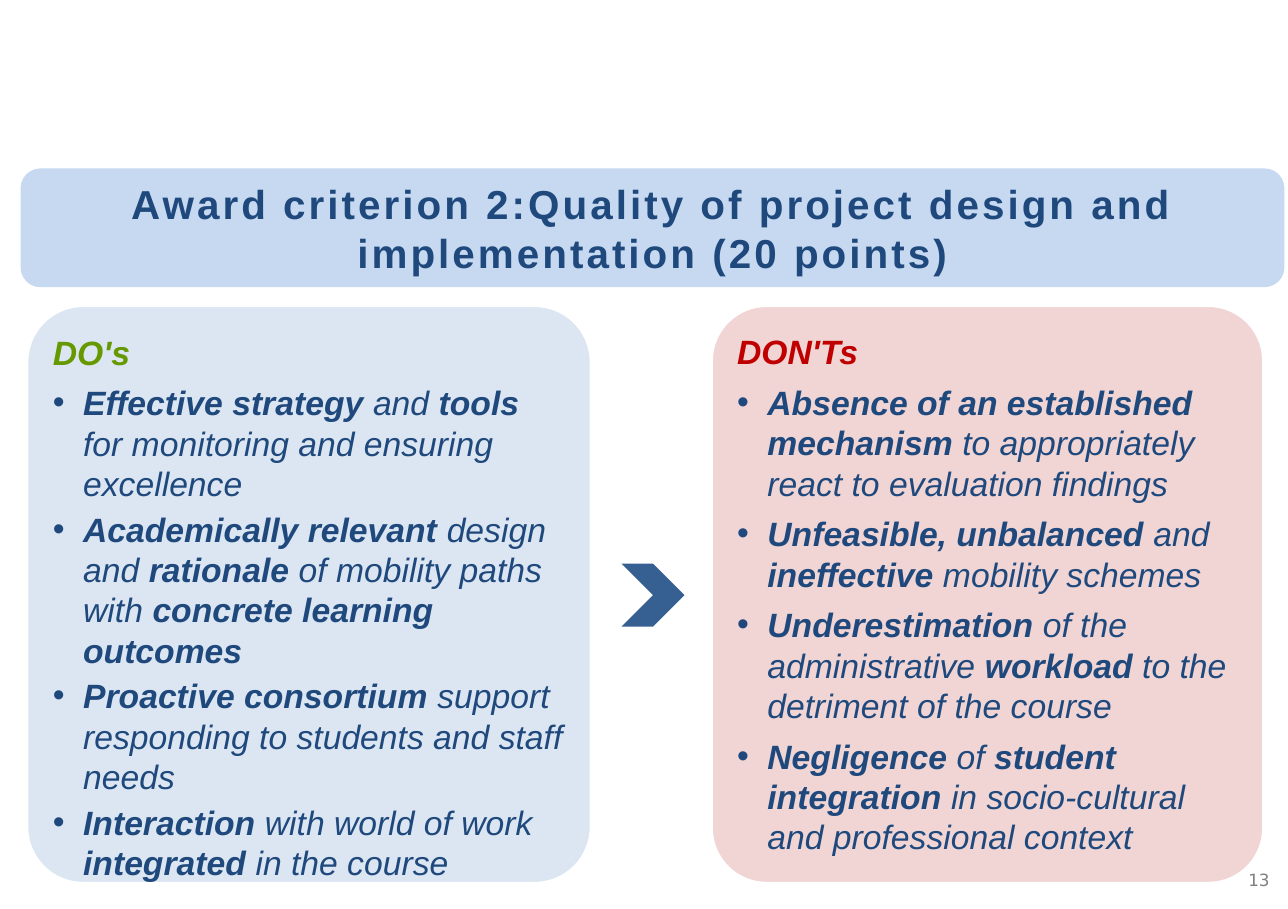
"""Build the slide on award criterion 2: project design and implementation."""
from dataclasses import dataclass

from lxml.etree import SubElement
from pptx import Presentation
from pptx.dml.color import RGBColor
from pptx.enum.shapes import MSO_SHAPE
from pptx.enum.text import MSO_ANCHOR, MSO_AUTO_SIZE, PP_ALIGN
from pptx.oxml.ns import qn
from pptx.util import Inches, Pt


@dataclass
class Theme:
    font: str = "Arial"
    number_font: str = "DejaVu Sans"
    navy: str = "1F497D"
    arrow: str = "376092"
    banner: str = "C6D9F1"
    do_fill: str = "DCE6F2"
    dont_fill: str = "E6B9B8"
    do_heading: str = "669900"
    dont_heading: str = "C00000"
    white: str = "FFFFFF"
    grey: str = "808080"
    title_size: int = 24
    body_size: int = 20
    number_size: int = 10


theme = Theme()
presentation = Presentation()
presentation.slide_width, presentation.slide_height = Inches(10.63), Inches(7.5)
slide = presentation.slides.add_slide(presentation.slide_layouts[5])


def add_filled(kind, left, top, width, height, fill):
    """Add a plain filled shape placed by percentages of the slide."""
    column, row = presentation.slide_width / 100, presentation.slide_height / 100
    shape = slide.shapes.add_shape(
        kind, int(left * column), int(top * row), int(width * column), int(height * row))
    shape.shadow.inherit = False
    shape.fill.solid()
    shape.fill.fore_color.rgb = RGBColor.from_string(fill)
    shape.line.fill.background()
    return shape


def add_text(frame, text, size=theme.body_size, color=theme.navy, font=theme.font,
             italic=False, align=PP_ALIGN.LEFT, after=0, bullet=False, spacing=0):
    """Add a paragraph in which asterisks enclose the bold words."""
    paragraph = frame.add_paragraph() if frame.text else frame.paragraphs[0]
    if bullet:
        properties = paragraph._p.get_or_add_pPr()
        properties.set("marL", str(Inches(0.25)))
        properties.set("indent", str(-Inches(0.25)))
        SubElement(properties, qn("a:buFont"), typeface=font)
        SubElement(properties, qn("a:buChar"), char="•")
    paragraph.alignment = align
    paragraph.space_after = Pt(after)
    for index, words in enumerate(text.split("*")):
        if words:
            run = paragraph.add_run()
            run.text = words
            run.font.name, run.font.size = font, Pt(size)
            run.font.bold, run.font.italic = index % 2 == 1, italic
            run.font.color.rgb = RGBColor.from_string(color)
            if spacing:
                run._r.get_or_add_rPr().set("spc", str(spacing))


banner = add_filled(MSO_SHAPE.ROUNDED_RECTANGLE, 1.6, 18.53, 98.12, 13.07, theme.banner)
title = slide.shapes.title
title.left, title.top, title.width, title.height = banner.left, banner.top, banner.width, banner.height
banner._element.addnext(title._element)
title_frame = title.text_frame
title_frame.word_wrap = True
title_frame.auto_size = MSO_AUTO_SIZE.NONE
title_frame.vertical_anchor = MSO_ANCHOR.MIDDLE
title_frame.margin_left = title_frame.margin_right = Inches(0.08)
title_frame.margin_top = title_frame.margin_bottom = Inches(0.04)
add_text(title_frame, "*Award criterion 2:Quality of project design and implementation (20 points)*",
         size=theme.title_size, align=PP_ALIGN.CENTER, spacing=180)

panels = [
    (2.07, 43.84, theme.do_fill, 100, "DO's", theme.do_heading, 3, [
        "*Effective strategy* and *tools* for monitoring and ensuring excellence",
        "*Academically relevant* design and *rationale* of mobility paths with *concrete learning outcomes*",
        "*Proactive consortium *support responding to students and staff needs",
        "*Interaction* with world of work *integrated *in the course",
    ]),
    (55.22, 42.9, theme.dont_fill, 60, "DON'Ts", theme.dont_heading, 6, [
        "*Absence of an established mechanism* to appropriately react to evaluation findings",
        "*Unfeasible, unbalanced* and *ineffective* mobility schemes",
        "*Underestimation* of the administrative *workload* to the detriment of the course",
        "*Negligence* of *student integration* in socio-cultural and professional context",
    ]),
]
for left, width, fill, opacity, heading, heading_color, gap, points in panels:
    panel = add_filled(MSO_SHAPE.ROUNDED_RECTANGLE, left, 33.6, width, 63.6, fill)
    panel.adjustments[0] = 0.1
    if opacity < 100:
        fill_color = panel._element.spPr.find(qn("a:solidFill")).find(qn("a:srgbClr"))
        SubElement(fill_color, qn("a:alpha"), val=str(opacity * 1000))
    panel.line.color.rgb = RGBColor.from_string(theme.white)
    panel.line.width = Pt(2)
    frame = panel.text_frame
    frame.word_wrap = True
    frame.vertical_anchor = MSO_ANCHOR.TOP
    frame.margin_left = frame.margin_right = Inches(0.08)
    frame.margin_top = frame.margin_bottom = Inches(0.08)
    add_text(frame, f"*{heading}*", color=heading_color, italic=True, after=6)
    for point in points:
        add_text(frame, point, italic=True, after=gap, bullet=True)

add_filled(MSO_SHAPE.CHEVRON, 48.26, 62, 4.89, 6.93, theme.arrow)

number = slide.shapes.add_textbox(Inches(10.15), Inches(7.03), Inches(0.48), Inches(0.46))
number.text_frame.word_wrap = True
number.text_frame.vertical_anchor = MSO_ANCHOR.MIDDLE
add_text(number.text_frame, "13", size=theme.number_size, color=theme.grey,
         font=theme.number_font, align=PP_ALIGN.CENTER)

presentation.save("out.pptx")
